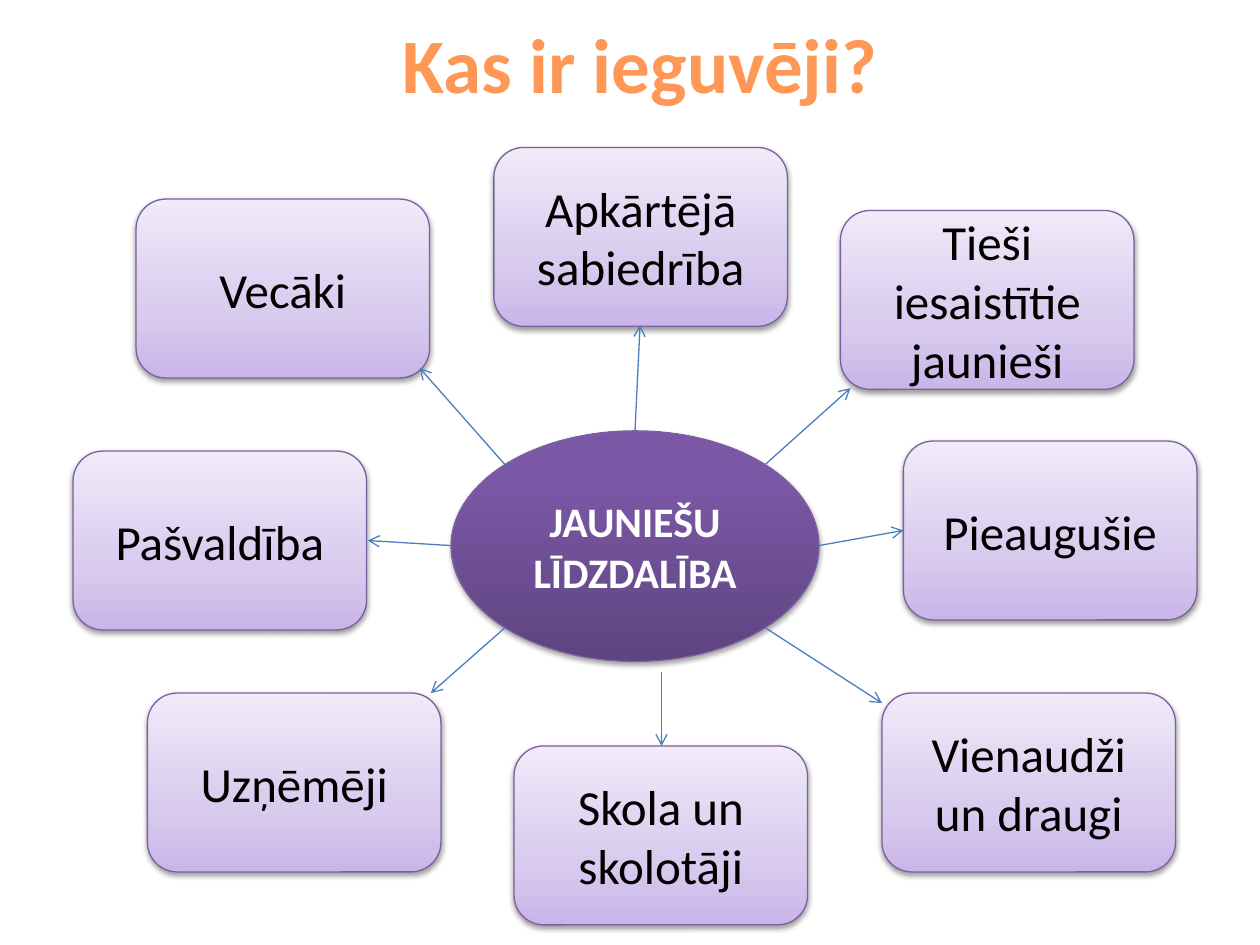
from dataclasses import dataclass

from lxml import etree
from pptx import Presentation
from pptx.dml import color
from pptx.enum import shapes, text
from pptx.oxml import ns
from pptx.util import Inches, Pt

FONT = "Calibri"
OUTLINE = "7D60A0"
ARROW_BLUE = "4B7EBC"
BOX_WIDTH, BOX_HEIGHT = 2.33, 1.42


@dataclass(frozen=True)
class Gradient:
    stops: tuple[tuple[int, str], ...]
    angle: int


@dataclass(frozen=True)
class Look:
    gradient: Gradient
    shadow_opacity: int
    shadow_distance: float
    size: int
    text_color: str
    bold: bool


@dataclass(frozen=True)
class Beneficiary:
    label: str
    left: float
    top: float
    arrow_start: tuple[float, float]
    arrow_end: tuple[float, float]


TITLE_GRADIENT = Gradient(((0, "9D4700"), (78, "FF9856"), (100, "FFF5F1")), 90)
CENTER_LOOK = Look(
    Gradient(((0, "5F4480"), (80, "7B58A6"), (100, "7C57A8")), 270),
    35, 1.8, 24, "FFFFFF", True)
BOX_LOOK = Look(
    Gradient(((0, "C9B5E8"), (35, "D8CBEE"), (100, "F0EAF9")), 270),
    38, 1.6, 28, "000000", False)

BENEFICIARIES = (
    Beneficiary("Vecāki", 1.08, 1.58, (4.01, 3.69), (3.33, 2.92)),
    Beneficiary("Apkārtējā sabiedrība", 3.92, 1.17, (5.04, 3.42), (5.08, 2.58)),
    Beneficiary("Tieši iesaistītie jaunieši", 6.67, 1.67, (6.07, 3.69), (6.75, 3.08)),
    Beneficiary("Pieaugušie", 7.17, 3.5, (6.5, 4.33), (7.17, 4.21)),
    Beneficiary("Vienaudži un draugi", 7, 5.5, (6.07, 4.98), (7, 5.58)),
    Beneficiary("Skola un skolotāji", 4.08, 5.92, (5.25, 5.33), (5.25, 5.92)),
    Beneficiary("Uzņēmēji", 1.17, 5.5, (4.01, 4.98), (3.42, 5.5)),
    Beneficiary("Pašvaldība", 0.58, 3.58, (3.58, 4.33), (2.92, 4.29)),
)


def rgb(value: str) -> color.RGBColor:
    return color.RGBColor.from_string(value)


def add_element(parent, tag: str, **attributes):
    return etree.SubElement(
        parent, ns.qn(tag), {key: str(value) for key, value in attributes.items()})


def apply_gradient(fill, owner, gradient: Gradient) -> None:
    fill.gradient()
    element = owner.find(ns.qn("a:gradFill"))
    for child in list(element):
        element.remove(child)
    stop_list = add_element(element, "a:gsLst")
    for position, value in gradient.stops:
        stop = add_element(stop_list, "a:gs", pos=position * 1000)
        add_element(stop, "a:srgbClr", val=value)
    add_element(element, "a:lin", ang=gradient.angle * 60000, scaled=0)


def add_shadow(shape, opacity: int, distance: float) -> None:
    shape.shadow.inherit = False
    effects = shape._element.spPr.find(ns.qn("a:effectLst"))
    shadow = add_element(effects, "a:outerShdw", blurRad=Pt(3.1), dist=Pt(distance),
                         dir=90 * 60000, rotWithShape=0)
    black = add_element(shadow, "a:srgbClr", val="000000")
    add_element(black, "a:alpha", val=opacity * 1000)


def write_text(frame, content: str, size: int, bold: bool):
    frame.text = content
    frame.word_wrap = True
    frame.vertical_anchor = text.MSO_ANCHOR.MIDDLE
    paragraph = frame.paragraphs[0]
    paragraph.alignment = text.PP_ALIGN.CENTER
    paragraph.font.name = FONT
    paragraph.font.size = Pt(size)
    paragraph.font.bold = bold
    return paragraph


def add_title(slide, content: str) -> None:
    title = slide.shapes.title
    title.left, title.top = Inches(0.58), Inches(0)
    title.width, title.height = Inches(9), Inches(1)
    paragraph = write_text(title.text_frame, content, 44, True)
    properties = paragraph._p.pPr.find(ns.qn("a:defRPr"))
    apply_gradient(paragraph.font.fill, properties, TITLE_GRADIENT)


def add_node(slide, preset, label: str, left: float, top: float,
             width: float, height: float, look: Look) -> None:
    node = slide.shapes.add_shape(
        preset, Inches(left), Inches(top), Inches(width), Inches(height))
    apply_gradient(node.fill, node._element.spPr, look.gradient)
    node.line.color.rgb = rgb(OUTLINE)
    node.line.width = Pt(0.75)
    add_shadow(node, look.shadow_opacity, look.shadow_distance)
    paragraph = write_text(node.text_frame, label, look.size, look.bold)
    paragraph.font.color.rgb = rgb(look.text_color)


def add_arrow(slide, start: tuple[float, float], end: tuple[float, float]) -> None:
    arrow = slide.shapes.add_connector(
        shapes.MSO_CONNECTOR.STRAIGHT, *map(Inches, start + end))
    arrow.line.color.rgb = rgb(ARROW_BLUE)
    arrow.line.width = Pt(0.75)
    add_element(arrow.line._get_or_add_ln(), "a:tailEnd", type="arrow")
    add_element(arrow._element.spPr, "a:effectLst")


def main() -> None:
    deck = Presentation()
    deck.slide_width, deck.slide_height = Inches(10), Inches(7.5)
    slide = deck.slides.add_slide(deck.slide_layouts[5])
    add_title(slide, "Kas ir ieguvēji?")
    add_node(slide, shapes.MSO_SHAPE.OVAL, "JAUNIEŠU LĪDZDALĪBA",
             3.58, 3.42, 2.92, 1.83, CENTER_LOOK)
    for beneficiary in BENEFICIARIES:
        add_node(slide, shapes.MSO_SHAPE.ROUNDED_RECTANGLE, beneficiary.label,
                 beneficiary.left, beneficiary.top, BOX_WIDTH, BOX_HEIGHT, BOX_LOOK)
    for beneficiary in BENEFICIARIES:
        add_arrow(slide, beneficiary.arrow_start, beneficiary.arrow_end)
    deck.save("out.pptx")


if __name__ == "__main__":
    main()
